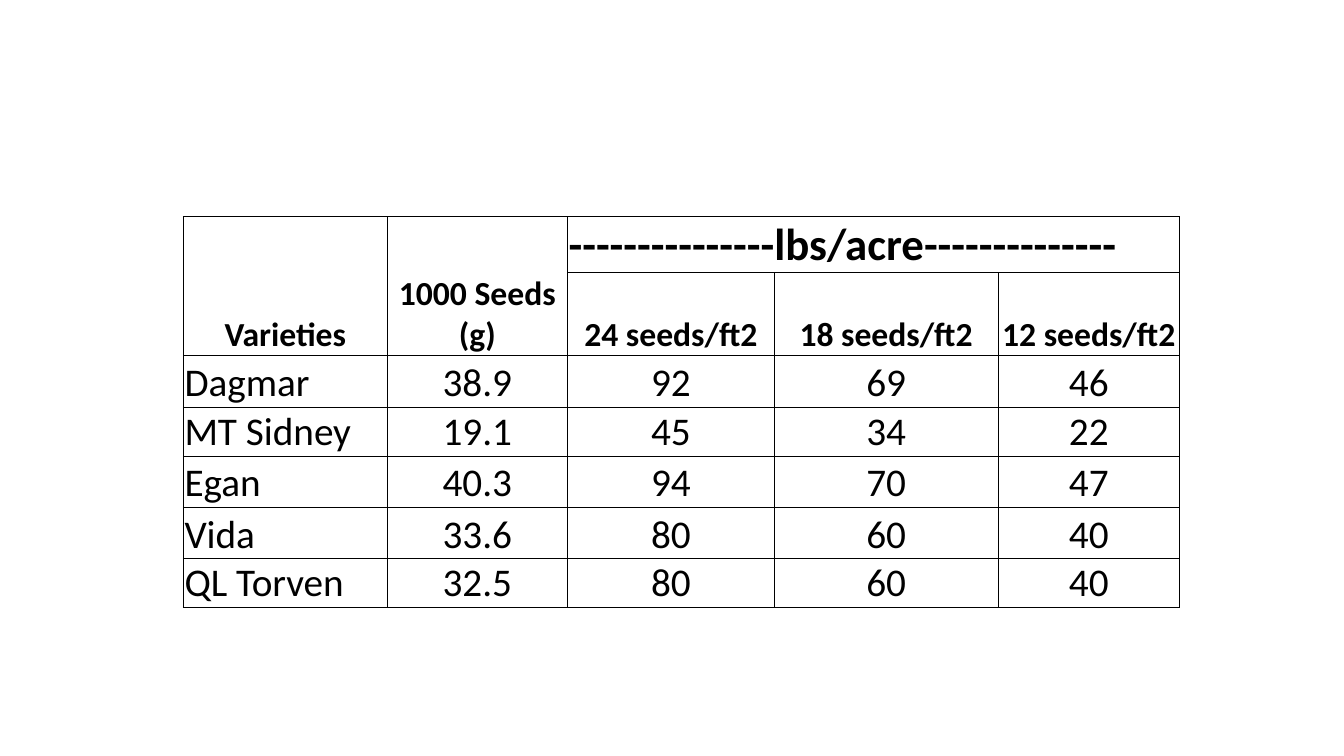
from lxml import etree
from pptx import Presentation
from pptx import util as u
from pptx.dml.color import RGBColor
from pptx.enum import text
from pptx.oxml.ns import qn

BLACK = RGBColor(0, 0, 0)
FONT = "Calibri"
COLUMN_WIDTHS = [2.02, 1.79, 2.05, 2.22, 1.8]
ROW_HEIGHTS = [0.45, 0.33, 0.51, 0.43, 0.51, 0.51, 0.42]
SEED_RATES = [
    ["Varieties", "1000 Seeds (g)", "---------------lbs/acre--------------", "", ""],
    ["", "", "24 seeds/ft2", "18 seeds/ft2", "12 seeds/ft2"],
    ["Dagmar", "38.9", "92", "69", "46"],
    ["MT Sidney", "19.1", "45", "34", "22"],
    ["Egan", "40.3", "94", "70", "47"],
    ["Vida", "33.6", "80", "60", "40"],
    ["QL Torven", "32.5", "80", "60", "40"],
]
MERGES = [((0, 0), (1, 0)), ((0, 1), (1, 1)), ((0, 2), (0, 4))]


class SlideBuilder:
    def __init__(self, deck):
        self.font = FONT
        self.color = BLACK
        self.slide = deck.slides.add_slide(deck.slide_layouts[6])

    def border(self, cell, side, width):
        properties = cell._tc.get_or_add_tcPr()
        line = etree.SubElement(properties, qn(f"a:ln{side}"), w=str(u.Pt(width)))
        fill = etree.SubElement(line, qn("a:solidFill"))
        etree.SubElement(fill, qn("a:srgbClr"), val=str(self.color))

    def cell(self, cell, words, size, bold, align):
        cell.margin_left = cell.margin_right = cell.margin_top = u.Inches(0.01)
        cell.margin_bottom = 0
        cell.vertical_anchor = text.MSO_ANCHOR.BOTTOM
        cell.fill.background()
        para = cell.text_frame.paragraphs[0]
        para.alignment = align
        para.font.size = u.Pt(size)
        if words:
            span = para.add_run()
            span.text = words
            span.font.name = self.font
            span.font.size = u.Pt(size)
            span.font.bold = bold
            span.font.color.rgb = self.color

    def table(self, left, top, height, widths, heights, rows, merges):
        frame = self.slide.shapes.add_table(
            len(rows), len(widths), u.Inches(left), u.Inches(top),
            u.Inches(sum(widths)), u.Inches(height))
        table = frame.table
        table.first_row = table.horz_banding = False
        for column, width in zip(table.columns, widths):
            column.width = u.Inches(width)
        for row, row_height in zip(table.rows, heights):
            row.height = u.Inches(row_height)
        frame.height = u.Inches(height)
        last_row, last_column = len(rows) - 1, len(widths) - 1
        for r, values in enumerate(rows):
            for c, words in enumerate(values):
                cell = table.cell(r, c)
                outer = {"L": c == 0, "R": c == last_column,
                         "T": r == 0, "B": r == last_row}
                for side, is_outer in outer.items():
                    self.border(cell, side, 1 if is_outer else 0.5)
                header = r < 2
                unit = r == 0 and c >= 2
                size = 32 if unit else 24 if header else 28
                left_aligned = unit or (c == 0 and not header)
                align = text.PP_ALIGN.LEFT if left_aligned else text.PP_ALIGN.CENTER
                self.cell(cell, words, size, header, align)
        for first, last in merges:
            table.cell(*first).merge(table.cell(*last))


def main():
    deck = Presentation()
    deck.slide_width = u.Inches(13.33)
    deck.slide_height = u.Inches(7.5)
    page = SlideBuilder(deck)
    page.table(1.82, 2.15, 3.45, COLUMN_WIDTHS, ROW_HEIGHTS, SEED_RATES, MERGES)
    deck.save("out.pptx")


if __name__ == "__main__":
    main()
